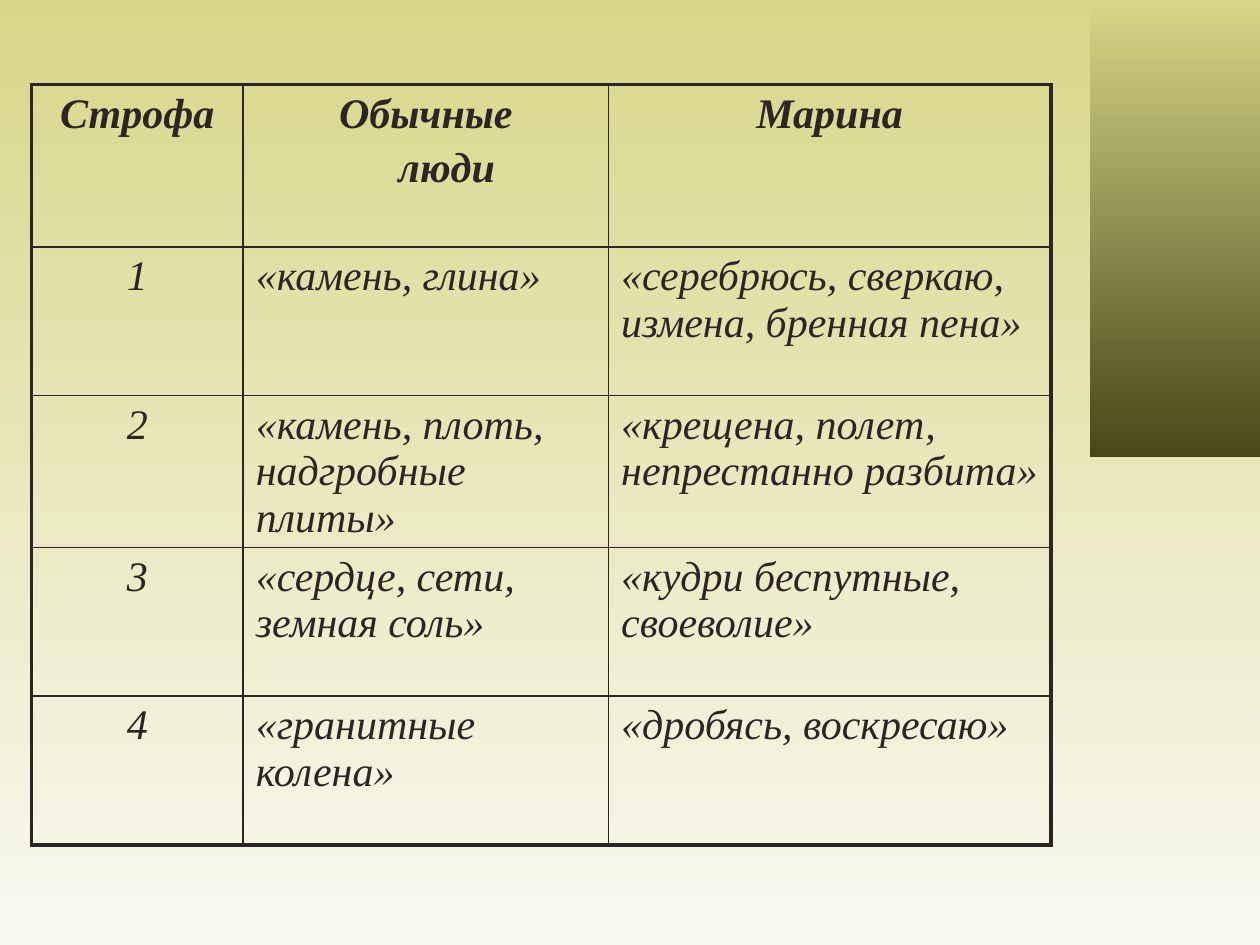
"""Build a slide with a table contrasting ordinary people and Marina by stanza."""
from lxml import etree
from pptx import Presentation
from pptx.dml.color import RGBColor
from pptx.enum.shapes import MSO_SHAPE
from pptx.enum.text import PP_ALIGN
from pptx.oxml.ns import qn
from pptx.util import Inches, Pt

RECTANGLE = MSO_SHAPE.RECTANGLE
CENTER, LEFT = PP_ALIGN.CENTER, PP_ALIGN.LEFT
COLORS = {"ink": "2D2525", "top": "D8D688", "pale": "F9F9F1", "olive": "484719"}
COLUMN_WIDTHS = [1.68, 2.9, 3.51]
ROW_HEIGHTS = [1.29] + [1.18] * 4
ROWS = [
    ["Строфа", "Обычные\nлюди", "Марина"],
    ["1", "«камень, глина»", "«серебрюсь, сверкаю, измена, бренная пена»"],
    ["2", "«камень, плоть, надгробные плиты»", "«крещена, полет, непрестанно разбита»"],
    ["3", "«сердце, сети, земная соль»", "«кудри беспутные, своеволие»"],
    ["4", "«гранитные колена»", "«дробясь, воскресаю»"],
]


def fill_gradient(fill, start, end):
    fill.gradient()
    fill.gradient_angle = 270
    for stop, name in zip(fill.gradient_stops, (start, end)):
        stop.color.rgb = RGBColor.from_string(COLORS[name])


def add_borders(cell, thick_sides):
    properties = cell._tc.get_or_add_tcPr()
    for position, side in enumerate("LRTB"):
        width = Pt(2.25 if side in thick_sides else 1)
        line = etree.Element(qn(f"a:ln{side}"), w=str(int(width)))
        solid = etree.SubElement(line, qn("a:solidFill"))
        etree.SubElement(solid, qn("a:srgbClr"), val=COLORS["ink"])
        properties.insert(position, line)


deck = Presentation()
deck.slide_width, deck.slide_height = Inches(10), Inches(7.5)
slide = deck.slides.add_slide(deck.slide_layouts[6])
fill_gradient(slide.background.fill, "top", "pale")

side_panel = slide.shapes.add_shape(RECTANGLE, Inches(8.65), Inches(0), Inches(1.35), Inches(3.63))
side_panel.shadow.inherit = False
side_panel.line.fill.background()
fill_gradient(side_panel.fill, "top", "olive")

table = slide.shapes.add_table(
    len(ROWS), len(COLUMN_WIDTHS), Inches(0.25), Inches(0.67),
    Inches(sum(COLUMN_WIDTHS)), Inches(sum(ROW_HEIGHTS)),
).table
table.first_row = table.horz_banding = False
for column, width in zip(table.columns, COLUMN_WIDTHS):
    column.width = Inches(width)
for row, height in zip(table.rows, ROW_HEIGHTS):
    row.height = Inches(height)

last_row, last_column = len(ROWS) - 1, len(COLUMN_WIDTHS) - 1
for r, texts in enumerate(ROWS):
    for c, text in enumerate(texts):
        cell = table.cell(r, c)
        cell.fill.background()
        edges = {"L": c == 0, "R": c == last_column, "T": r == 0, "B": r == last_row}
        add_borders(cell, [side for side, outer in edges.items() if outer])
        cell.text = text
        font_format = {"name": "Times New Roman", "size": Pt(24), "bold": r == 0, "italic": True}
        for index, para in enumerate(cell.text_frame.paragraphs):
            para.alignment = CENTER if r == 0 or c == 0 else LEFT
            if index:
                para.space_before = Pt(4.8)
                para._p.get_or_add_pPr().set("marL", str(Inches(0.33)))
            for span in para.runs:
                for name, value in font_format.items():
                    setattr(span.font, name, value)
                span.font.color.rgb = RGBColor.from_string(COLORS["ink"])

deck.save("out.pptx")
